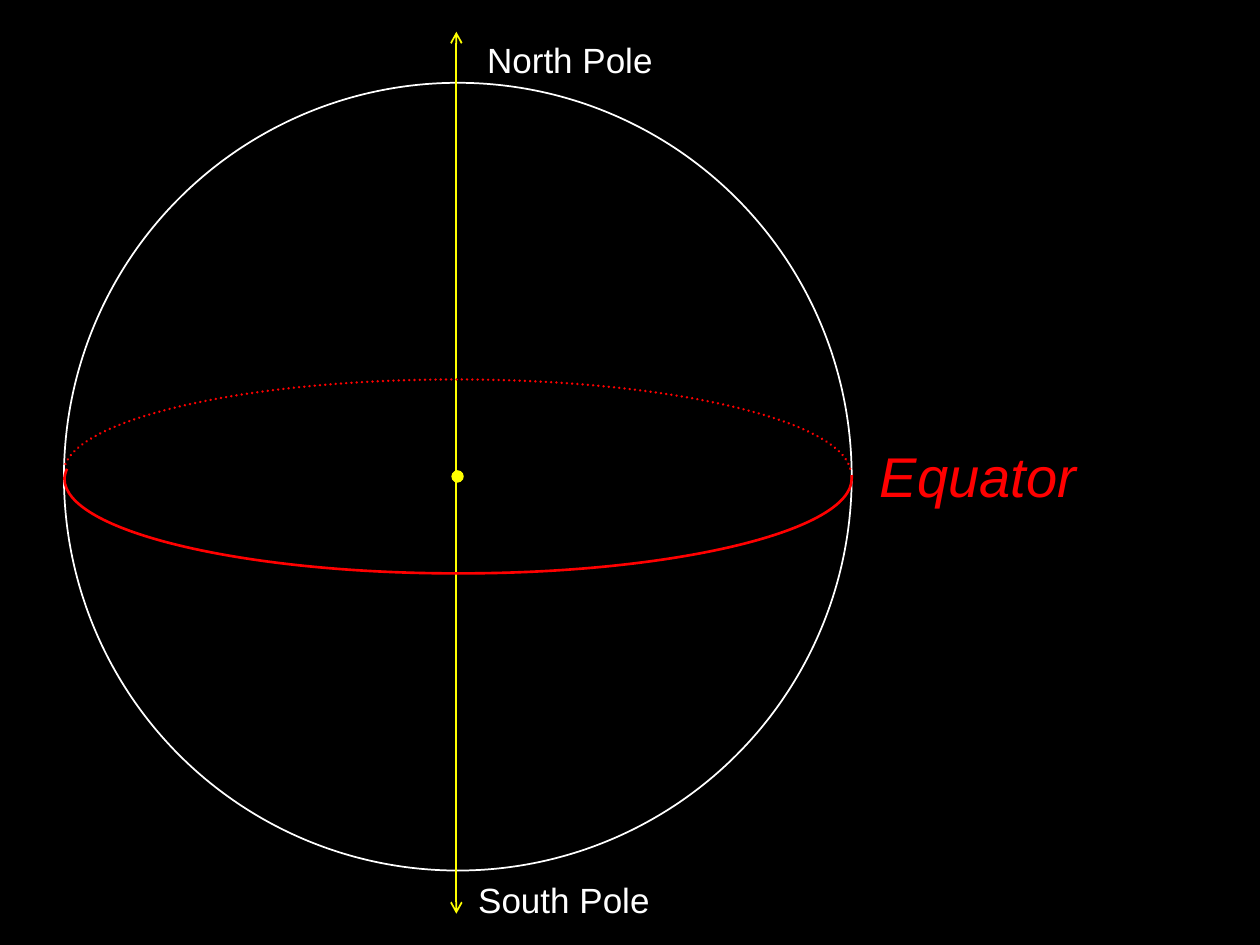
from lxml.etree import SubElement as Sub
from pptx import Presentation as Deck
from pptx.dml.color import RGBColor as Rgb
from pptx.enum.dml import MSO_LINE as Dash
from pptx.enum.shapes import MSO_CONNECTOR as Link, MSO_SHAPE as Form
from pptx.enum.text import MSO_ANCHOR as Anchor, MSO_AUTO_SIZE as Fit
from pptx.oxml.ns import qn
from pptx.util import Cm, Pt

HUES = {"space": "000000", "globe": "FFFFFF", "axis": "FFFF00", "ring": "FF0000"}
FRONT = [
    (1.35, 9.45),
    (1.32, 9.53), (1.3, 9.6), (1.3, 9.65),
    (1.3, 10.7), (4.85, 11.56), (9.24, 11.56),
    (13.62, 11.56), (17.17, 10.7), (17.17, 9.65),
    (17.17, 9.63), (17.17, 9.6), (17.17, 9.58),
]
BACK = [
    (17.14, 9.45),
    (16.87, 8.43), (13.39, 7.65), (9.2, 7.65),
    (4.98, 7.65), (1.5, 8.43), (1.29, 9.45),
]


def hue(name):
    return Rgb.from_string(HUES[name])


def stroke(line, name, width):
    line.color.rgb = hue(name)
    line.width = Pt(width)


def disc(slide, left, top, size, fill=None, edge=None):
    shape = slide.shapes.add_shape(Form.OVAL, Cm(left), Cm(top), Cm(size), Cm(size))
    shape.shadow.inherit = False
    if fill:
        shape.fill.solid()
        shape.fill.fore_color.rgb = hue(fill)
    else:
        shape.fill.background()
    if edge:
        stroke(shape.line, edge, 1)
    else:
        shape.line.fill.background()


def arrow(slide, x, start, end):
    link = slide.shapes.add_connector(Link.STRAIGHT, Cm(x), Cm(start), Cm(x), Cm(end))
    stroke(link.line, "axis", 1)
    Sub(link.line._get_or_add_ln(), qn("a:tailEnd"), type="arrow")
    Sub(link._element.spPr, qn("a:effectLst"))


def curve(slide, knots, dash=None):
    points = [(Cm(x), Cm(y)) for x, y in knots]
    pen = slide.shapes.build_freeform(*points[0])
    pen.add_line_segments(points[1:], close=False)
    shape = pen.convert_to_shape()
    route = next(shape._element.iter(qn("a:path")))
    steps = route.findall(qn("a:lnTo"))
    for i in range(0, len(steps), 3):
        bend = Sub(route, qn("a:cubicBezTo"))
        for step in steps[i:i + 3]:
            bend.append(step[0])
            route.remove(step)
    shape.shadow.inherit = False
    shape.fill.background()
    stroke(shape.line, "ring", 1.5)
    if dash:
        shape.line.dash_style = dash
        shape.line._get_or_add_ln().set("cap", "rnd")


def label(slide, text, box, size, name, italic=False, wrap=False):
    frame = slide.shapes.add_textbox(*map(Cm, box)).text_frame
    frame.text = text
    frame.word_wrap = wrap
    frame.auto_size = Fit.NONE if wrap else Fit.SHAPE_TO_FIT_TEXT
    frame.vertical_anchor = Anchor.MIDDLE
    font = frame.paragraphs[0].runs[0].font
    font.name = "Arial"
    font.size = Pt(size)
    font.italic = italic
    font.color.rgb = hue(name)


def main():
    deck = Deck()
    deck.slide_width, deck.slide_height = Cm(25.4), Cm(19.05)
    slide = deck.slides.add_slide(deck.slide_layouts[6])
    slide.background.fill.solid()
    slide.background.fill.fore_color.rgb = hue("space")

    disc(slide, 1.29, 1.67, 15.88, edge="globe")
    arrow(slide, 9.2, 9.55, 0.64)
    label(slide, "North Pole", (9.57, 0.64, 3.84, 1.1), 20, "globe")
    arrow(slide, 9.2, 9.65, 18.42)
    label(slide, "South Pole", (9.39, 17.58, 3.96, 1.1), 20, "globe")
    label(slide, "Equator", (17.49, 8.59, 4.6, 1.98), 32, "ring", True, True)
    curve(slide, FRONT)
    curve(slide, BACK, Dash.ROUND_DOT)
    disc(slide, 9.1, 9.48, 0.25, fill="axis")
    deck.save("out.pptx")


if __name__ == "__main__":
    main()
